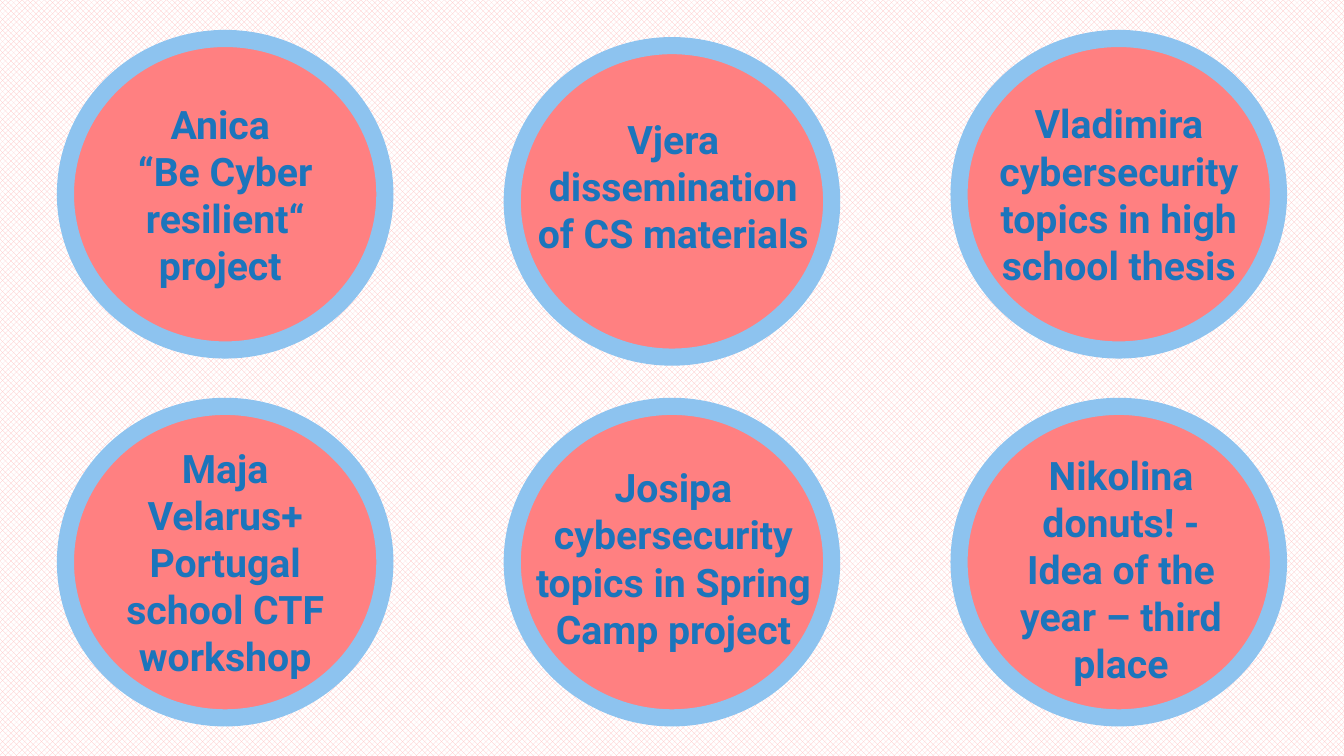
from pptx import Presentation
from pptx.dml.color import RGBColor
from pptx.enum.dml import MSO_PATTERN
from pptx.enum.shapes import MSO_SHAPE as Shape
from pptx.enum.text import MSO_ANCHOR as Anchor, MSO_AUTO_SIZE as AutoSize, PP_ALIGN as Align
from pptx.util import Cm, Pt

CORAL = RGBColor(0xFF, 0x80, 0x81)
SKY = RGBColor(0x8D, 0xC3, 0xEF)
BLUE = RGBColor(0x1B, 0x75, 0xBC)
PINK = RGBColor(0xFF, 0xC1, 0xC1)
WHITE = RGBColor(0xFF, 0xFF, 0xFF)

ACTIVITIES = [
    {"cell": (0, 0), "paragraphs": ["Anica ", "“Be Cyber resilient“ project "]},
    {"cell": (1, 0), "drop": 0.18, "label_box": (13.18, 2.77, 7.57, 3.84),
     "paragraphs": ["Vjera dissemination of CS materials"]},
    {"cell": (2, 0), "label_box": (24.41, 2.39, 7.57, 5.05),
     "paragraphs": ["Vladimira cybersecurity topics in high school thesis"]},
    {"cell": (0, 1),
     "paragraphs": ["Maja", "Velarus+", "Portugal", "school CTF", "workshop"]},
    {"cell": (1, 1), "label_box": (13.21, 11.56, 7.52, 5.23),
     "paragraphs": ["Josipa cybersecurity topics in Spring Camp project"]},
    {"cell": (2, 1), "label_box": (24.49, 11.25, 7.52, 6.25),
     "paragraphs": ["Nikolina", "donuts! -", "Idea of the", "year – third", "place"]},
]
LEFT, TOP = 1.65, 0.97
COLUMN_STEP, ROW_STEP = 11.26, 9.27
CIRCLE_WIDTH, CIRCLE_HEIGHT = 8.05, 7.85


def add_circle(slide, column, row, drop):
    circle = slide.shapes.add_shape(
        Shape.OVAL, Cm(LEFT + column * COLUMN_STEP), Cm(TOP + row * ROW_STEP + drop),
        Cm(CIRCLE_WIDTH), Cm(CIRCLE_HEIGHT))
    circle.shadow.inherit = False
    circle.fill.solid()
    circle.fill.fore_color.rgb = CORAL
    circle.line.color.rgb = SKY
    circle.line.width = Pt(12.25)
    return circle


def write(frame, paragraphs):
    frame.word_wrap = True
    for index, wording in enumerate(paragraphs):
        paragraph = frame.add_paragraph() if index else frame.paragraphs[0]
        paragraph.alignment = Align.CENTER
        run = paragraph.add_run()
        run.text = wording
        run.font.name = "Roboto"
        run.font.size = Pt(28)
        run.font.bold = True
        run.font.color.rgb = BLUE


def main():
    deck = Presentation()
    deck.slide_width, deck.slide_height = Cm(33.87), Cm(19.05)
    slide = deck.slides.add_slide(deck.slide_layouts[6])
    backdrop = slide.background.fill
    backdrop.patterned()
    backdrop.pattern = MSO_PATTERN.LARGE_CHECKER_BOARD
    backdrop.fore_color.rgb = PINK
    backdrop.back_color.rgb = WHITE

    for activity in ACTIVITIES:
        circle = add_circle(slide, *activity["cell"], activity.get("drop", 0))
        if "label_box" in activity:
            label = slide.shapes.add_textbox(*map(Cm, activity["label_box"])).text_frame
            label.auto_size = AutoSize.SHAPE_TO_FIT_TEXT
        else:
            label = circle.text_frame
            label.vertical_anchor = Anchor.MIDDLE
        write(label, activity["paragraphs"])

    deck.save("out.pptx")


if __name__ == "__main__":
    main()
